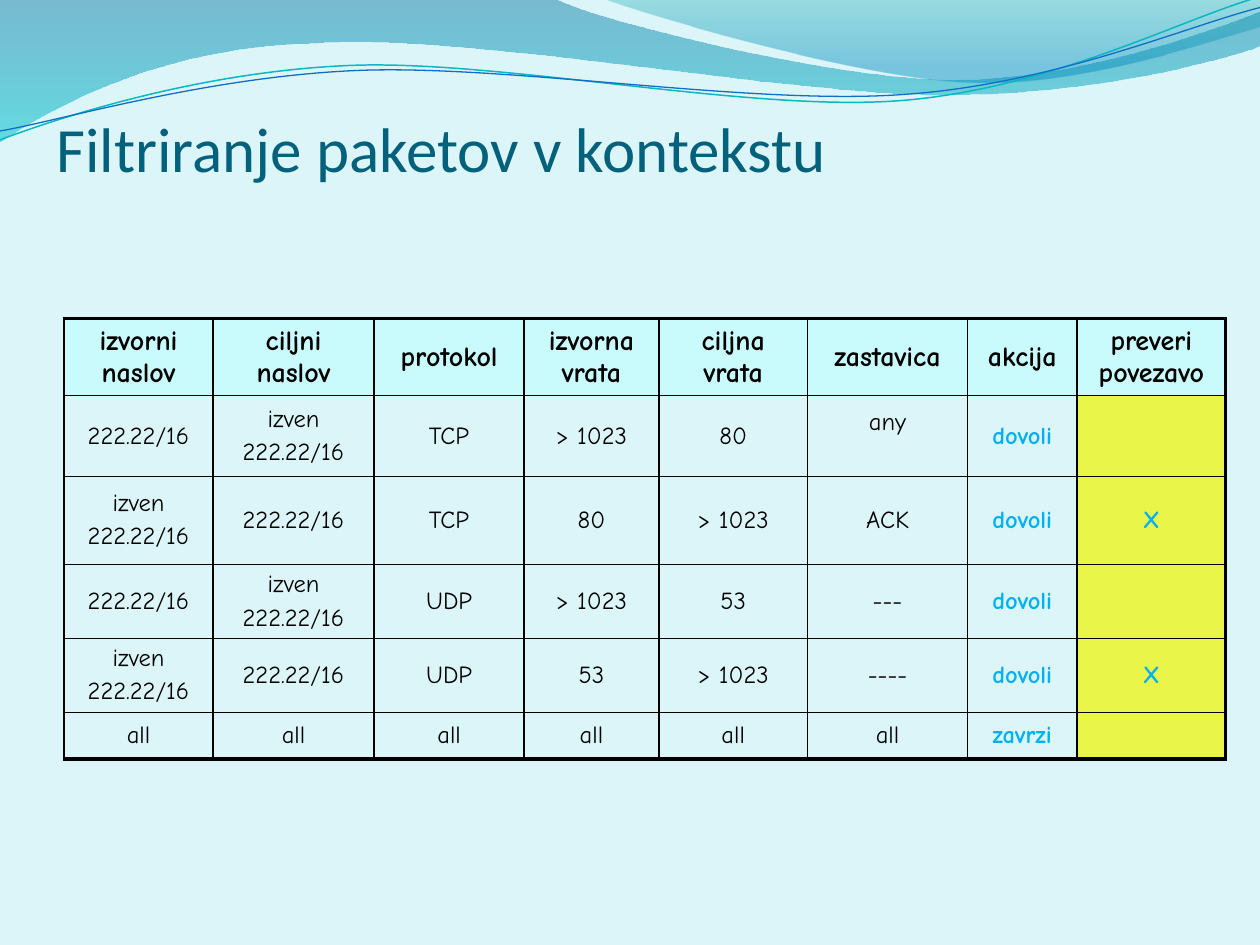
from math import cos, radians, sin
from lxml.etree import SubElement as Sub
from pptx import Presentation
from pptx.dml.color import RGBColor as Rgb
from pptx.enum.text import MSO_ANCHOR as Anchor, PP_ALIGN as Align
from pptx.oxml.ns import qn
from pptx.util import Inches, Pt

WIDE, HIGH = Inches(10), Inches(7.5)
COL, ROW = WIDE / 10, HIGH / 7.5
TILT = 2.7

PALE = Rgb(0xDB, 0xF5, 0xF9)
INK = Rgb(0x04, 0x61, 0x7B)
BLACK = Rgb(0, 0, 0)
HEAD = Rgb(0xC9, 0xFA, 0xFC)
LIME = Rgb(0xE9, 0xF5, 0x49)
SKY = Rgb(0x00, 0xB0, 0xF0)
TEAL = Rgb(0x0A, 0xB8, 0xBF)
BLUE = Rgb(0x0F, 0x6F, 0xC6)
DEEP = Rgb(0x00, 0x74, 0xA1)
AQUA = Rgb(0x00, 0xC6, 0xCF)
SEA = Rgb(0x00, 0xA1, 0xA9)
LAKE = Rgb(0x00, 0x8B, 0xBF)

BANDS = [
    ([(0, 0), (4.4, -.01),
      (4.76, .17, 6.64, .63, 7.58, .63), (8.53, .63, 9.58, .26, 10, .09),
      (10.01, .36), (9.83, .44, 8.7, .76, 7.46, .75),
      (6.22, .75, 3.82, .28, 2.57, .34), (1.29, .36, .46, .83, -.01, 1.13),
      (0, 0)],
     [(0, DEEP, 45), (1, AQUA, 55)]),
    ([(4.79, -.01), (5.09, .11, 6.82, .62, 7.69, .65),
      (8.56, .69, 9.61, .32, 10, .21), (10, 0), (4.79, -.01)],
     [(0, SEA, 30), (.8, LAKE, 45)]),
]
LINES = [
    ([(0, 1.11), (.48, .93, 1.58, .57, 2.77, .52),
      (3.95, .47, 5.93, .89, 7.13, .8), (8.33, .71, 9.38, .15, 9.98, -.02)],
     (4.99, .57), TEAL, .85),
    ([(0, 1.04), (.47, .96, 1.64, .61, 2.83, .56),
      (4.03, .51, 5.97, .84, 7.17, .75), (8.36, .67, 9.41, .21, 10, .06)],
     (5, .59), BLUE, .75),
]

COLS = [1.18, 1.28, 1.19, 1.07, 1.18, 1.27, .87, 1.18]
ROWS = [.52, .64, .7, .53, .52, .37]
IN, OUT = "222.22/16", "izven\n222.22/16"
RULES = [
    ["izvorni naslov", "ciljni naslov", "protokol", "izvorna vrata",
     "ciljna vrata", "zastavica", "akcija", "preveri povezavo"],
    [IN, OUT, "TCP", "> 1023", "80", "any", "dovoli", ""],
    [OUT, IN, "TCP", "80", "> 1023", "ACK", "dovoli", "X"],
    [IN, OUT, "UDP", "> 1023", "53", "---", "dovoli", ""],
    [OUT, IN, "UDP", "53", "> 1023", "----", "dovoli", "X"],
    ["all"] * 6 + ["zavrzi", ""],
]


def pairs(step):
    """Split a flat step into points."""
    return list(zip(step[::2], step[1::2]))


def turn(steps, mid):
    """Turn all points clockwise by the tilt about a middle."""
    c, s = cos(radians(TILT)), sin(radians(TILT))
    done = []
    for step in steps:
        flat = []
        for x, y in pairs(step):
            dx, dy = x - mid[0], y - mid[1]
            flat += [mid[0] + dx * c - dy * s, mid[1] + dx * s + dy * c]
        done.append(tuple(flat))
    return done


def draw(slide, box, steps, close):
    """Draw an outline of corners and curves inside a box."""
    left, top = box[:2]
    routes = [[(round((left + x) * COL), round((top + y) * ROW))
               for x, y in pairs(step)] for step in steps]
    ends = [route[-1] for route in routes]
    pen = slide.shapes.build_freeform(*ends[0])
    pen.add_line_segments(ends[1:], close=close)
    shape = pen.convert_to_shape()
    shape.shadow.inherit = False
    track = next(shape.element.iter(qn("a:path")))
    for node, route in zip(list(track)[1:], routes[1:]):
        if len(route) == 3:
            curve = Sub(track, qn("a:cubicBezTo"))
            for x, y in route:
                Sub(curve, qn("a:pt"), x=str(x - shape.left),
                    y=str(y - shape.top))
            track.replace(node, curve)
    return shape


def add_waves(slide, box):
    """Draw the shaded bands and thin lines of the header."""
    for steps, stops in BANDS:
        band = draw(slide, box, steps, True)
        band.line.fill.background()
        band.fill.gradient()
        band.fill.gradient_angle = 270
        for stop, (place, color, _) in zip(band.fill.gradient_stops, stops):
            stop.position = place
            stop.color.rgb = color
        tints = band.element.spPr.iter(qn("a:srgbClr"))
        for tint, (_, _, alpha) in zip(tints, stops):
            Sub(tint, qn("a:alpha"), val=str(alpha * 1000))
    for steps, mid, color, width in LINES:
        line = draw(slide, box, turn(steps, mid), False)
        line.rotation = 360 - TILT
        line.fill.background()
        line.line.color.rgb = color
        line.line.width = Pt(width)


def place(box):
    """Turn a box in columns and rows into lengths."""
    left, top, width, height = box
    return [round(n) for n in
            (left * COL, top * ROW, width * COL, height * ROW)]


def write(para, text, font, size, color, bold=False):
    """Add one styled run to a paragraph."""
    run = para.add_run()
    run.text = text
    run.font.name = font
    run.font.size = Pt(size)
    run.font.bold = bold
    run.font.color.rgb = color


def add_title(slide, box):
    """Place the heading at the foot of its box."""
    frame = slide.shapes.add_textbox(*place(box)).text_frame
    frame.word_wrap = True
    frame.vertical_anchor = Anchor.BOTTOM
    frame.margin_left = frame.margin_right = frame.margin_bottom = 0
    write(frame.paragraphs[0], "Filtriranje paketov v kontekstu",
          "Calibri", 36, INK)


def edge(cell, sides):
    """Set the border width of each side of a cell."""
    props = cell._tc.get_or_add_tcPr()
    for side, width in sides.items():
        line = Sub(props, qn(f"a:ln{side}"), w=str(Pt(width)))
        Sub(Sub(line, qn("a:solidFill")), qn("a:srgbClr"), val=str(BLACK))


def fill_cell(cell, text, size, color, bold):
    """Write centred lines of text into a cell."""
    cell.vertical_anchor = Anchor.MIDDLE
    frame = cell.text_frame
    for i, words in enumerate(text.split("\n")):
        para = frame.add_paragraph() if i else frame.paragraphs[0]
        para.alignment = Align.CENTER
        gap = Sub(para._p.get_or_add_pPr(), qn("a:spcBef"))
        Sub(gap, qn("a:spcPct"), val="20000")
        if words:
            write(para, words, "Comic Neue", size, color, bold)
        else:
            Sub(para._p, qn("a:endParaRPr"), sz=str(size * 100))


def add_rules(slide, box):
    """Build the table of packet filter rules."""
    table = slide.shapes.add_table(len(ROWS), len(COLS), *place(box)).table
    table.first_row = table.horz_banding = False
    for col, width in zip(table.columns, COLS):
        col.width = round(box[2] * COL * width / sum(COLS))
    for row, height in zip(table.rows, ROWS):
        row.height = round(box[3] * ROW * height / sum(ROWS))
    last, end = len(ROWS) - 1, len(COLS) - 1
    for r, rule in enumerate(RULES):
        for c, text in enumerate(rule):
            cell = table.cell(r, c)
            head, act = r == 0, c >= end - 1
            edge(cell, {"L": 1, "R": 2.25 if c == end else 1,
                        "T": 1 if r else 2.25, "B": 2.25 if r == last else 1})
            if head or c == end:
                cell.fill.solid()
                cell.fill.fore_color.rgb = HEAD if head else LIME
            else:
                cell.fill.background()
            fill_cell(cell, text, 16 if head else 14,
                      SKY if act and not head else BLACK, head or act)
            if text == "any":
                cell.margin_bottom = Inches(.27)


def main():
    """Build and save the slide."""
    deck = Presentation()
    deck.slide_width, deck.slide_height = WIDE, HIGH
    slide = deck.slides.add_slide(deck.slide_layouts[6])
    slide.background.fill.solid()
    slide.background.fill.fore_color.rgb = PALE
    add_waves(slide, (0, 0, 10, 1.14))
    add_rules(slide, (.51, 2.53, sum(COLS), sum(ROWS)))
    add_title(slide, (.45, .22, 8.5, 1.25))
    deck.save("out.pptx")


if __name__ == "__main__":
    main()
